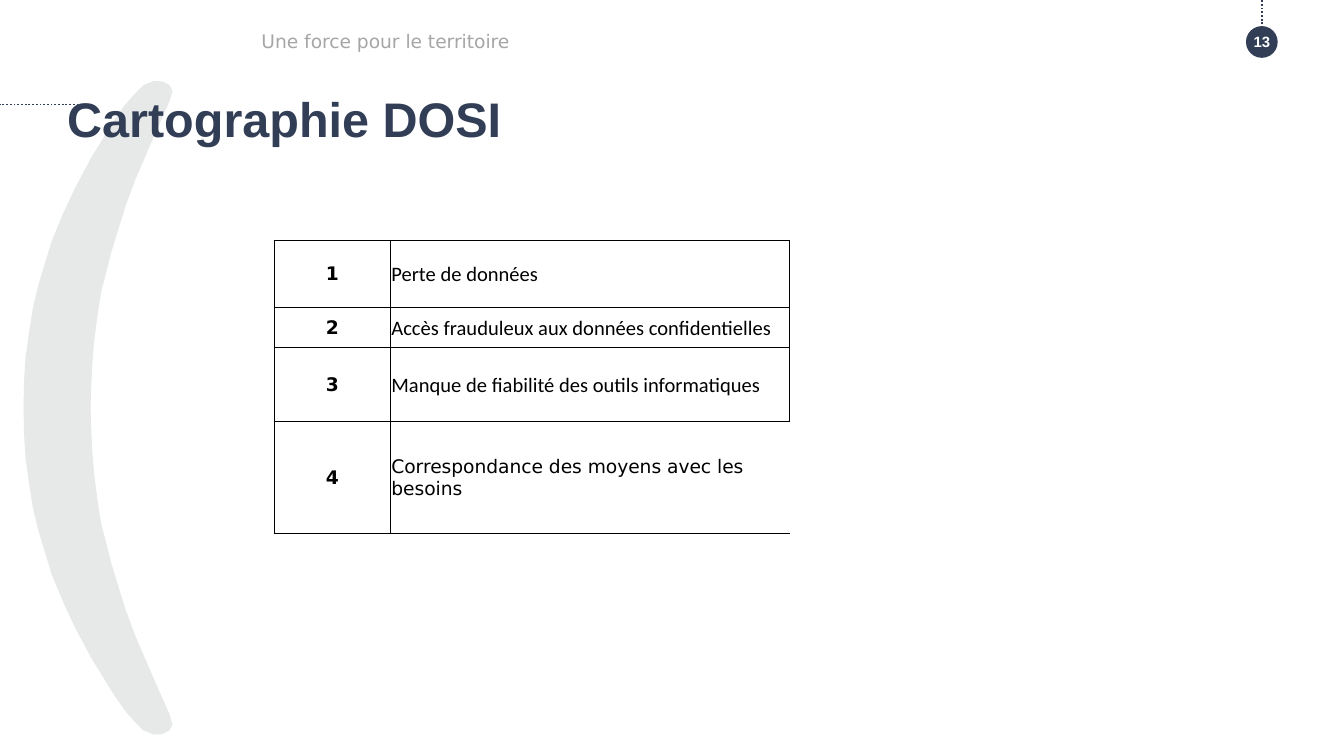
from pptx import Presentation
from pptx.dml.color import RGBColor
from pptx.enum import dml, shapes, text
from pptx.oxml.ns import qn
from pptx.util import Pt
from lxml import etree

NAVY = RGBColor(0x31, 0x3E, 0x56)
PALE = RGBColor(0xE7, 0xE8, 0xE8)
GREY = RGBColor(0xA6, 0xA6, 0xA6)
BLACK = RGBColor(0, 0, 0)
WHITE = RGBColor(255, 255, 255)
MID = text.MSO_ANCHOR.MIDDLE
LEFT = text.PP_ALIGN.LEFT
CENTER = text.PP_ALIGN.CENTER


def write(frame, words, face, size, color, bold=False, align=LEFT):
    par = frame.paragraphs[0]
    par.alignment = align
    run = par.add_run()
    run.text = words
    run.font.name = face
    run.font.size = Pt(size)
    run.font.bold = bold
    run.font.color.rgb = color


def edge(cell, side, width):
    line = etree.SubElement(cell._tc.get_or_add_tcPr(), qn("a:ln" + side))
    line.set("w", str(Pt(width)))
    if width:
        fill = etree.SubElement(line, qn("a:solidFill"))
        etree.SubElement(fill, qn("a:srgbClr")).set("val", str(BLACK))
    else:
        etree.SubElement(line, qn("a:noFill"))


deck = Presentation()
deck.slide_width, deck.slide_height = Pt(720), Pt(405)
slide = deck.slides.add_slide(deck.slide_layouts[5])
tree = slide.shapes

middle = 218.5
outer = [(92, 48.8), (90.5, 46), (87, 44), (82.5, 43.8), (77, 46), (72, 51), (67, 56.8),
         (61, 65.5), (57, 72), (49, 85), (40.5, 101), (34, 115), (28, 129.5),
         (24.5, 141), (21, 152.5), (18, 165), (15.8, 179), (14, 192), (13.2, 205)]
inner = [(48.3, 212), (49, 196), (50, 183.5), (52, 168), (54, 155.5), (56.3, 147),
         (59, 136), (63.4, 121.5), (67, 110), (72, 96.5), (78, 82.5), (83, 71),
         (87, 62), (90.5, 54)]
half = outer + [(13, middle)]
points = half + [(x, 2 * middle - y) for x, y in outer[::-1]]
points += [(x, 2 * middle - y) for x, y in inner[::-1]] + [(48.2, middle)] + inner
pen = tree.build_freeform(Pt(points[0][0]), Pt(points[0][1]))
pen.add_line_segments([(Pt(x), Pt(y)) for x, y in points[1:]])
arc = pen.convert_to_shape()
arc.shadow.inherit = False
arc.fill.solid()
arc.fill.fore_color.rgb = PALE
arc.line.color.rgb = PALE
arc.line.width = Pt(0.75)

disc = tree.add_shape(shapes.MSO_SHAPE.OVAL, Pt(667.5), Pt(14), Pt(17), Pt(17))
disc.shadow.inherit = False
disc.fill.solid()
disc.fill.fore_color.rgb = NAVY
disc.line.fill.background()

for ends in [(676, 15, 676, 0), (46, 56, 0, 56)]:
    dots = tree.add_connector(shapes.MSO_CONNECTOR.STRAIGHT, *map(Pt, ends))
    dots.line.color.rgb = NAVY
    dots.line.width = Pt(1)
    dots.line.dash_style = dml.MSO_LINE.ROUND_DOT
    etree.SubElement(dots._element.spPr, qn("a:effectLst"))

rows = [(35.5, "Perte de données", "Calibri", 11, 1),
        (21.8, "Accès frauduleux aux données confidentielles", "Calibri", 11, 1),
        (39.7, "Manque de fiabilité des outils informatiques", "Calibri", 11, 1),
        (60, "Correspondance des moyens avec les besoins", "DejaVu Sans", 10, 0)]
grid = tree.add_table(len(rows), 2, Pt(147), Pt(129), Pt(276), Pt(157)).table
grid.first_row = grid.horz_banding = False
grid.columns[0].width, grid.columns[1].width = Pt(62), Pt(214)
for i, (height, words, face, size, right) in enumerate(rows):
    grid.rows[i].height = Pt(height)
    rank, risk = grid.cell(i, 0), grid.cell(i, 1)
    for cell, widths in [(rank, (1, 0.5, 0.5, 0.5)), (risk, (0.5, right, 0.5, 0.5))]:
        cell.vertical_anchor = MID
        cell.margin_left = cell.margin_right = cell.margin_top = Pt(0.7)
        cell.margin_bottom = 0
        for side, width in zip("LRTB", widths):
            edge(cell, side, width)
    rank.fill.solid()
    rank.fill.fore_color.rgb = WHITE
    risk.fill.background()
    write(rank.text_frame, str(i + 1), "DejaVu Sans", 10, BLACK, True, CENTER)
    write(risk.text_frame, words, face, size, BLACK)

title = tree.title
title.left, title.top, title.width, title.height = Pt(36), Pt(47.5), Pt(648), Pt(38)
frame = title.text_frame
frame.auto_size = text.MSO_AUTO_SIZE.NONE
frame.vertical_anchor = text.MSO_ANCHOR.TOP
frame.margin_left = frame.margin_right = frame.margin_top = frame.margin_bottom = 0
write(frame, "Cartographie DOSI", "Arial", 26, NAVY, True)
tree._spTree.append(title._element)

for spot, words, face, size, color, bold, align in [
        ((133, 10, 525, 24), "Une force pour le territoire", "DejaVu Sans", 10, GREY, False, LEFT),
        ((658, 18, 36, 9), "13", "Arial", 8, WHITE, True, CENTER)]:
    frame = tree.add_textbox(*map(Pt, spot)).text_frame
    frame.word_wrap = True
    frame.vertical_anchor = MID
    write(frame, words, face, size, color, bold, align)

deck.save("out.pptx")
